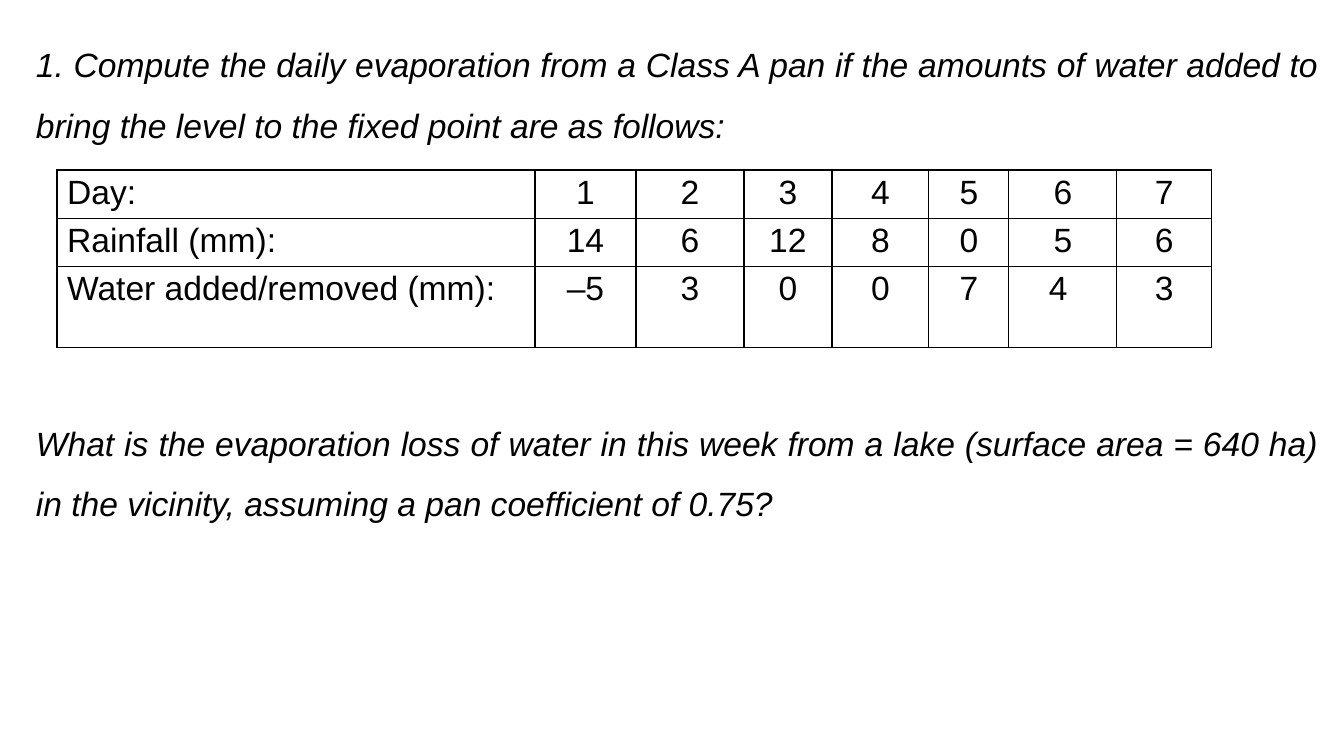
from lxml.etree import SubElement
from pptx import Presentation
from pptx.dml.color import RGBColor
from pptx.enum.text import PP_ALIGN
from pptx.oxml.ns import qn
from pptx.util import Emu, Pt

COLORS = {"ink": "000000"}
FONT = "Arial"
SIZE = 24


def px(length):
    return Emu(round(length * 914400 / 100.8))


def add_text(paragraph, text, alignment, italic=False):
    paragraph.alignment = alignment
    run = paragraph.add_run()
    run.text = text
    run.font.name = FONT
    run.font.size = Pt(SIZE)
    run.font.italic = italic
    run.font.color.rgb = RGBColor.from_string(COLORS["ink"])


presentation = Presentation()
presentation.slide_width = px(1344)
presentation.slide_height = px(756)
slide = presentation.slides.add_slide(presentation.slide_layouts[6])

questions = [
    ("1. Compute the daily evaporation from a Class A pan if the amounts of water "
     "added to bring the level to the fixed point are as follows:", 10),
    ("What is the evaporation loss of water in this week from a lake (surface area "
     "= 640 ha) in the vicinity, assuming a pan coefficient of 0.75?", 184),
]
text_frame = slide.shapes.add_textbox(px(26), px(19), px(1302), px(715)).text_frame
text_frame.word_wrap = True
for index, (question, space_before) in enumerate(questions):
    paragraph = text_frame.add_paragraph() if index else text_frame.paragraphs[0]
    paragraph.line_spacing = 1.5
    paragraph.space_before = Pt(space_before)
    add_text(paragraph, question, PP_ALIGN.JUSTIFY, italic=True)

readings = [
    ["Day:", "1", "2", "3", "4", "5", "6", "7"],
    ["Rainfall (mm):", "14", "6", "12", "8", "0", "5", "6"],
    ["Water added/removed (mm):", "–5", "3", "0", "0", "7", "4 ", "3"],
]
column_widths = [478, 101, 108, 88, 97, 80, 108, 95]
row_heights = [48, 47, 81]
table = slide.shapes.add_table(
    len(row_heights), len(column_widths), px(57), px(170),
    px(sum(column_widths)), px(sum(row_heights))).table
table.first_row = False
table.horz_banding = False
for column, width in zip(table.columns, column_widths):
    column.width = px(width)

for row, height, values in zip(table.rows, row_heights, readings):
    row.height = px(height)
    for index, (cell, value) in enumerate(zip(row.cells, values)):
        cell.margin_top = cell.margin_bottom = px(4)
        alignment = PP_ALIGN.CENTER if index else PP_ALIGN.LEFT
        add_text(cell.text_frame.paragraphs[0], value, alignment)
        properties = cell._tc.get_or_add_tcPr()
        for side in ("a:lnL", "a:lnR", "a:lnT", "a:lnB"):
            border = SubElement(properties, qn(side), w=str(Pt(1)))
            fill = SubElement(border, qn("a:solidFill"))
            SubElement(fill, qn("a:srgbClr"), val=COLORS["ink"])
        cell.fill.background()

presentation.save("out.pptx")
